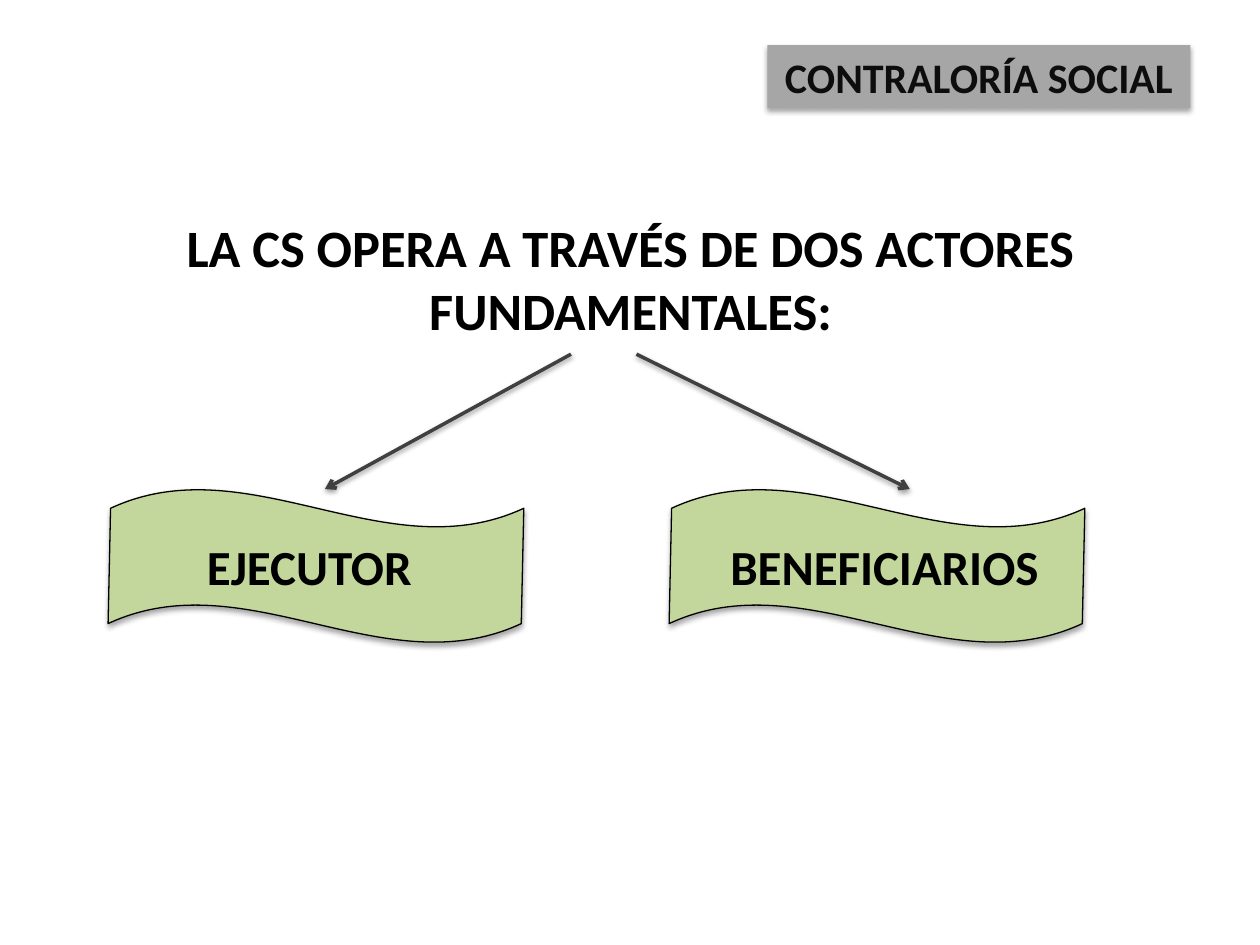
from lxml import etree
from pptx import Presentation
from pptx.dml.color import RGBColor
from pptx.enum import shapes, text
from pptx.oxml.ns import qn
from pptx.util import Cm, Pt

THEME = {
    "font": "Calibri",
    "black": "000000", "ink": "0D0D0D", "tag": "A6A6A6",
    "wave": "C3D69B", "arrow": "404040",
    "title_size": 30, "tag_size": 24, "actor_size": 28,
}

# Boxes are left, top, width, height in cm.
TITLE = ("LA CS OPERA A TRAVÉS DE DOS ACTORES FUNDAMENTALES:",
         (1.4, 4.19, 22.63, 2.82))
TAG = ("CONTRALORÍA SOCIAL", (15.47, 0.91, 8.53, 1.27))
ACTORS = [
    {"name": "EJECUTOR", "wave": 2.18, "label": (2.64, 7.19),
     "arrow": (11.51, 6.55)},
    {"name": "BENEFICIARIOS", "wave": 13.49, "label": (14.45, 6.76),
     "arrow": (12.83, 18.34)},
]
WAVE_TOP, WAVE_W, WAVE_H = 9.86, 8.38, 3.1
LABEL_TOP, LABEL_H = 10.69, 1.45
ARROW_TOP = 7.14


def tint(name):
    return RGBColor.from_string(THEME[name])


def write(shape, words, size, color="black"):
    frame = shape.text_frame
    frame.text = words
    frame.word_wrap = True
    frame.auto_size = text.MSO_AUTO_SIZE.NONE
    para = frame.paragraphs[0]
    para.alignment = text.PP_ALIGN.CENTER
    font = para.runs[0].font
    font.name, font.size, font.bold = THEME["font"], Pt(THEME[size]), True
    font.color.rgb = tint(color)


def shade(shape, alpha, dist):
    """Give a soft shadow that falls straight down."""
    props = shape._element.spPr
    for old in props.findall(qn("a:effectLst")):
        props.remove(old)
    effects = etree.SubElement(props, qn("a:effectLst"))
    outer = etree.SubElement(
        effects, qn("a:outerShdw"), blurRad=str(Pt(3.1)), dist=str(Pt(dist)),
        dir="5400000", rotWithShape="0")
    color = etree.SubElement(outer, qn("a:srgbClr"), val=THEME["black"])
    etree.SubElement(color, qn("a:alpha"), val=str(alpha * 1000))


def block(slide, kind, box, fill, line=None):
    shape = slide.shapes.add_shape(kind, *map(Cm, box))
    shape.fill.solid()
    shape.fill.fore_color.rgb = tint(fill)
    if line:
        shape.line.color.rgb = tint(line)
        shape.line.width = Pt(0.75)
    else:
        shape.line.fill.background()
    shade(shape, 35, 1.8)
    return shape


def arrow(slide, start, end):
    line = slide.shapes.add_connector(
        shapes.MSO_CONNECTOR.STRAIGHT,
        Cm(start), Cm(ARROW_TOP), Cm(end), Cm(WAVE_TOP))
    line.line.color.rgb = tint("arrow")
    line.line.width = Pt(2)
    etree.SubElement(line.line._get_or_add_ln(), qn("a:tailEnd"), type="arrow")
    shade(line, 38, 1.6)


def main():
    deck = Presentation()
    deck.slide_width, deck.slide_height = Cm(25.4), Cm(19.05)
    slide = deck.slides.add_slide(deck.slide_layouts[5])

    words, box = TITLE
    title = slide.shapes.title
    title.left, title.top, title.width, title.height = map(Cm, box)
    write(title, words, "title_size")

    words, box = TAG
    tag = block(slide, shapes.MSO_SHAPE.RECTANGLE, box, "tag")
    write(tag, words, "tag_size", "ink")

    for actor in ACTORS:
        wave = block(slide, shapes.MSO_SHAPE.WAVE,
                     (actor["wave"], WAVE_TOP, WAVE_W, WAVE_H), "wave", "black")
        wave.adjustments[0] = 0.125
        wave.adjustments[1] = -0.003
        left, width = actor["label"]
        label = slide.shapes.add_textbox(
            Cm(left), Cm(LABEL_TOP), Cm(width), Cm(LABEL_H))
        write(label, actor["name"], "actor_size")

    for actor in ACTORS:
        arrow(slide, *actor["arrow"])

    deck.save("out.pptx")


if __name__ == "__main__":
    main()
